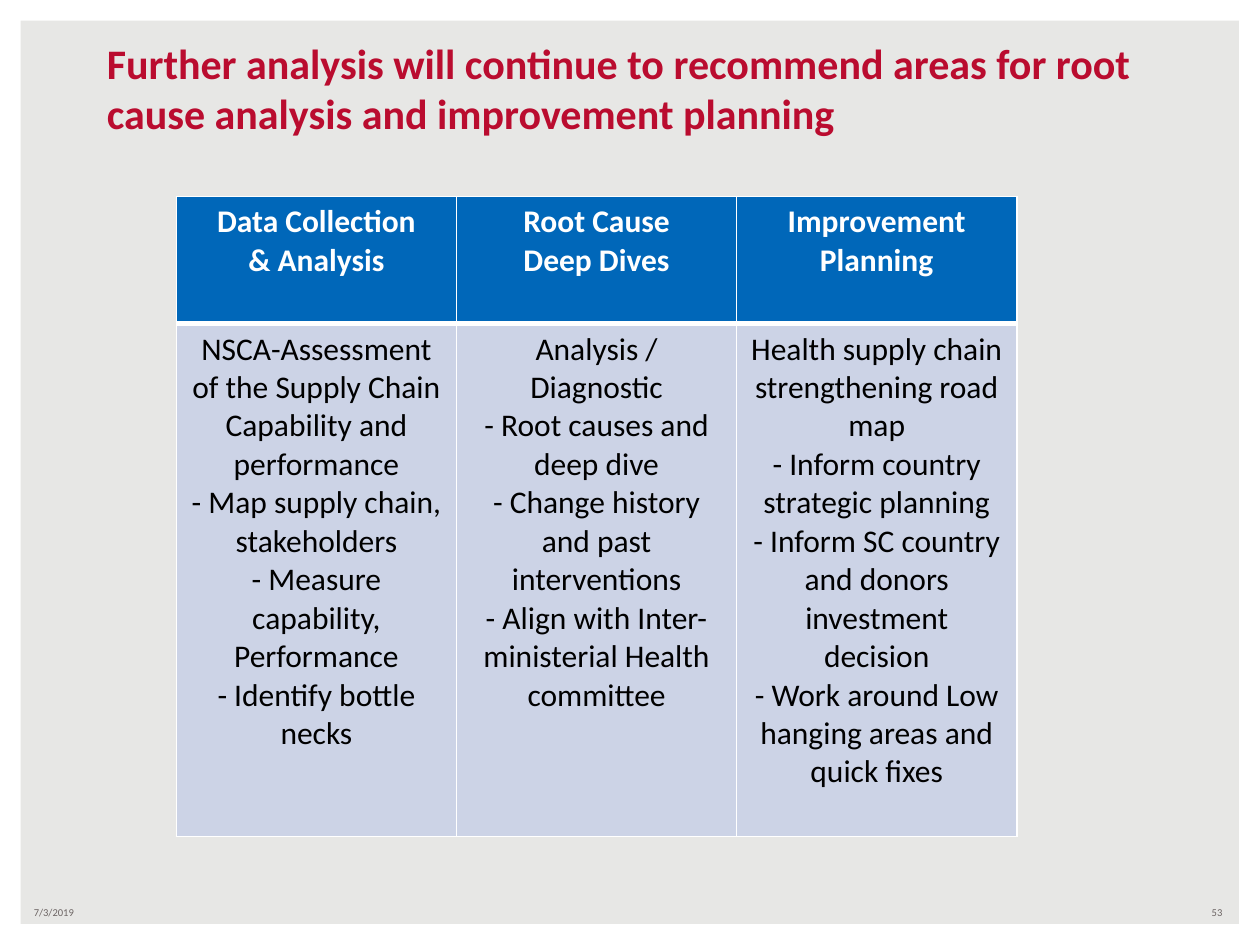
"""Build a slide with a three-stage table of analysis and planning."""
from dataclasses import dataclass

from lxml.etree import SubElement
from pptx import Presentation
from pptx.dml.color import RGBColor as Rgb
from pptx.enum.shapes import MSO_SHAPE as Shape
from pptx.enum.text import MSO_ANCHOR as Anchor, PP_ALIGN as Align
from pptx.oxml.ns import qn
from pptx.util import Inches, Pt

WIDE, HIGH = Inches(10), Inches(7.5)


@dataclass(frozen=True)
class Theme:
    font: str = "Calibri"
    back: str = "E7E7E5"
    white: str = "FFFFFF"
    red: str = "BA0C2F"
    blue: str = "0067B9"
    pale: str = "CCD3E6"
    black: str = "000000"
    grey: str = "6C6463"
    title: int = 24
    body: int = 18
    foot: int = 6
    thin: int = 1
    thick: int = 3


@dataclass(frozen=True)
class Stage:
    head: tuple[str, ...]
    body: tuple[str, ...]


@dataclass(frozen=True)
class Label:
    text: str
    left: float
    top: float
    width: float
    height: float
    size: int
    color: str
    bold: bool = False
    align: Align = Align.LEFT
    anchor: Anchor = Anchor.MIDDLE


@dataclass(frozen=True)
class Band:
    height: float
    fill: str
    color: str
    bold: bool
    top: int
    base: int


THEME = Theme()
STAGES = (
    Stage(("Data Collection", "& Analysis"),
          ("NSCA-Assessment of the Supply Chain Capability and performance",
           "- Map supply chain, stakeholders",
           "- Measure capability, Performance",
           "- Identify bottle necks")),
    Stage(("Root Cause", "Deep Dives"),
          ("Analysis / Diagnostic",
           "- Root causes and deep dive",
           "- Change history and past interventions",
           "- Align with Inter-ministerial Health committee")),
    Stage(("Improvement", "Planning"),
          ("Health supply chain strengthening road map",
           "- Inform country strategic planning",
           "- Inform SC country and donors investment decision",
           "- Work around Low hanging areas and quick fixes")),
)
BANDS = (
    Band(1.01, THEME.blue, THEME.white, True, THEME.thin, THEME.thick),
    Band(4.07, THEME.pale, THEME.black, False, THEME.thick, THEME.thin),
)
FOOT = dict(top=0.95, width=0.23, height=0.03, size=THEME.foot, color=THEME.grey)
LABELS = (
    Label("Further analysis will continue to recommend areas for root "
          "cause analysis and improvement planning",
          0.075, 0.033, 0.85, 0.175, THEME.title, THEME.red, True,
          anchor=Anchor.TOP),
    Label("7/3/2019", left=0.017, **FOOT),
    Label("53", left=0.75, align=Align.RIGHT, **FOOT),
)


def write(frame, lines: tuple[str, ...], size: int, color: str,
          bold: bool, align: Align) -> None:
    frame.word_wrap = True
    frame.text = "\n".join(lines)
    for para in frame.paragraphs:
        para.alignment = align
        font = para.font
        font.name, font.size, font.bold = THEME.font, Pt(size), bold
        font.color.rgb = Rgb.from_string(color)


def put_label(slide, label: Label) -> None:
    box = slide.shapes.add_textbox(
        int(label.left * WIDE), int(label.top * HIGH),
        int(label.width * WIDE), int(label.height * HIGH))
    box.text_frame.vertical_anchor = label.anchor
    write(box.text_frame, (label.text,), label.size, label.color,
          label.bold, label.align)


def put_frame(slide) -> None:
    frame = slide.shapes.add_shape(Shape.FRAME, 0, 0, WIDE, HIGH)
    frame.adjustments[0] = 0.022
    frame.shadow.inherit = False
    frame.fill.solid()
    frame.fill.fore_color.rgb = Rgb.from_string(THEME.white)
    frame.line.fill.background()


def edge(cell, band: Band) -> None:
    props = cell._tc.get_or_add_tcPr()
    sides = dict(lnL=THEME.thin, lnR=THEME.thin, lnT=band.top, lnB=band.base)
    for side, width in sides.items():
        line = SubElement(props, qn(f"a:{side}"), w=str(Pt(width)))
        fill = SubElement(line, qn("a:solidFill"))
        SubElement(fill, qn("a:srgbClr"), val=THEME.white)


def put_table(slide) -> None:
    high = Inches(sum(band.height for band in BANDS))
    table = slide.shapes.add_table(
        len(BANDS), len(STAGES), Inches(1.4), Inches(1.56),
        Inches(6.67), high).table
    for row, band in enumerate(BANDS):
        table.rows[row].height = Inches(band.height)
        for col, stage in enumerate(STAGES):
            cell = table.cell(row, col)
            write(cell.text_frame, (stage.head, stage.body)[row],
                  THEME.body, band.color, band.bold, Align.CENTER)
            edge(cell, band)
            cell.fill.solid()
            cell.fill.fore_color.rgb = Rgb.from_string(band.fill)


def main() -> None:
    deck = Presentation()
    deck.slide_width, deck.slide_height = WIDE, HIGH
    slide = deck.slides.add_slide(deck.slide_layouts[6])
    slide.background.fill.solid()
    slide.background.fill.fore_color.rgb = Rgb.from_string(THEME.back)
    put_frame(slide)
    put_table(slide)
    for label in LABELS:
        put_label(slide, label)
    deck.save("out.pptx")


if __name__ == "__main__":
    main()
